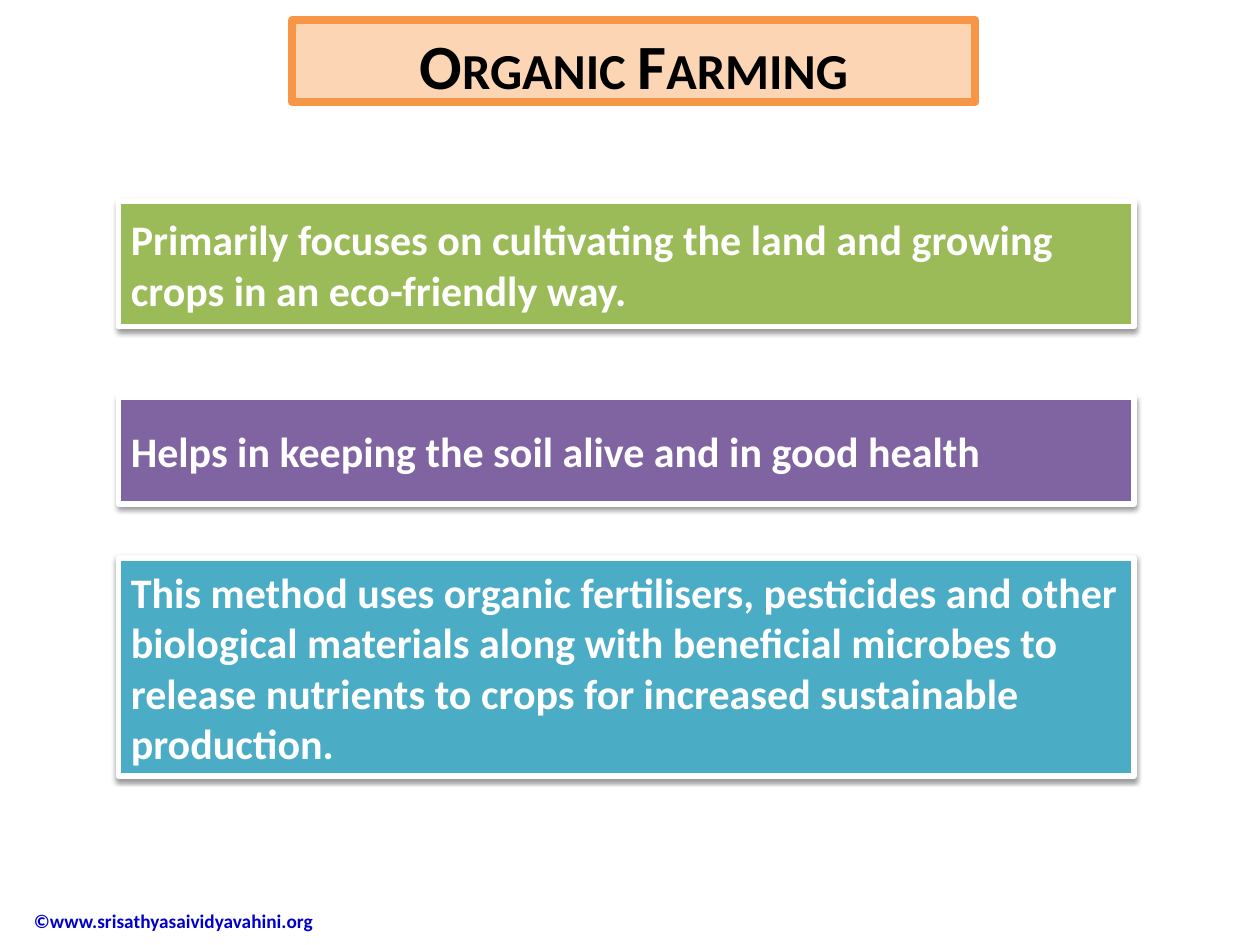
from dataclasses import dataclass

from lxml.etree import SubElement
from pptx import Presentation
from pptx.dml.color import RGBColor
from pptx.enum.shapes import MSO_SHAPE
from pptx.enum.text import MSO_ANCHOR, PP_ALIGN
from pptx.oxml.ns import qn
from pptx.util import Inches, Pt


@dataclass(frozen=True)
class Theme:
    font: str = "Calibri"
    title_size: float = 36
    body_size: float = 24
    footer_size: float = 11
    black: str = "000000"
    white: str = "FFFFFF"
    peach: str = "FCD5B5"
    orange: str = "F79646"
    green: str = "9BBB59"
    purple: str = "8064A2"
    teal: str = "4BACC6"
    link_blue: str = "0000CC"


class SlideBuilder:
    """Draws titles, cards and footers on a slide in one theme."""

    def __init__(self, slide, theme):
        self.slide = slide
        self.theme = theme

    def set_text(self, sp, text, size, color, anchor=MSO_ANCHOR.MIDDLE, align=PP_ALIGN.LEFT):
        tf = sp.text_frame
        for name, value in {"word_wrap": True, "vertical_anchor": anchor}.items():
            setattr(tf, name, value)
        p = tf.paragraphs[0]
        p.alignment = align
        r = p.add_run()
        r.text = text
        for name, value in {"name": self.theme.font, "size": Pt(size), "bold": True}.items():
            setattr(r.font, name, value)
        r.font.color.rgb = RGBColor.from_string(color)
        return p, r

    def box(self, left, top, width, height, fill, line, weight):
        sp = self.slide.shapes.add_shape(
            MSO_SHAPE.RECTANGLE, Inches(left), Inches(top), Inches(width), Inches(height))
        sp.shadow.inherit = False
        sp.fill.solid()
        sp.fill.fore_color.rgb = RGBColor.from_string(fill)
        sp.line.color.rgb = RGBColor.from_string(line)
        sp.line.width = Pt(weight)
        return sp

    def add_shadow(self, sp):
        effects = sp._element.spPr.find(qn("a:effectLst"))
        shadow = SubElement(effects, qn("a:outerShdw"), blurRad=str(Pt(3.1)),
                            dist=str(Pt(1.6)), dir="5400000", rotWithShape="0")
        color = SubElement(shadow, qn("a:srgbClr"), val=self.theme.black)
        SubElement(color, qn("a:alpha"), val="38000")

    def title(self, text):
        t = self.theme
        sp = self.box(2.32, 0.16, 5.42, 0.65, t.peach, t.orange, 4.5)
        p, r = self.set_text(sp, text, t.title_size, t.black, MSO_ANCHOR.TOP, PP_ALIGN.CENTER)
        r._r.get_or_add_rPr().set("cap", "small")

    def card(self, top, height, fill, text):
        t = self.theme
        sp = self.box(0.94, top, 8.06, height, fill, t.white, 3)
        self.add_shadow(sp)
        self.set_text(sp, text, t.body_size, t.white)

    def footer(self, text):
        t = self.theme
        sp = self.slide.shapes.add_textbox(Inches(-0.33), Inches(7.1), Inches(3.02), Inches(0.41))
        p, r = self.set_text(sp, text, t.footer_size, t.link_blue)
        p._p.get_or_add_pPr().set("marL", str(Inches(0.5)))


def main():
    prs = Presentation()
    prs.slide_width, prs.slide_height = Inches(10), Inches(7.5)
    theme = Theme()
    s = SlideBuilder(prs.slides.add_slide(prs.slide_layouts[6]), theme)
    s.footer("©www.srisathyasaividyavahini.org")
    s.title("Organic Farming")
    cards = [
        (1.6, 0.99, theme.green,
         "Primarily focuses on cultivating the land and growing crops in an eco-friendly way."),
        (3.15, 0.85, theme.purple, "Helps in keeping the soil alive and in good health"),
        (4.43, 1.73, theme.teal,
         "This method uses organic fertilisers, pesticides and other biological materials "
         "along with beneficial microbes to release nutrients to crops for increased "
         "sustainable production."),
    ]
    for card in cards:
        s.card(*card)
    prs.save("out.pptx")


if __name__ == "__main__":
    main()
